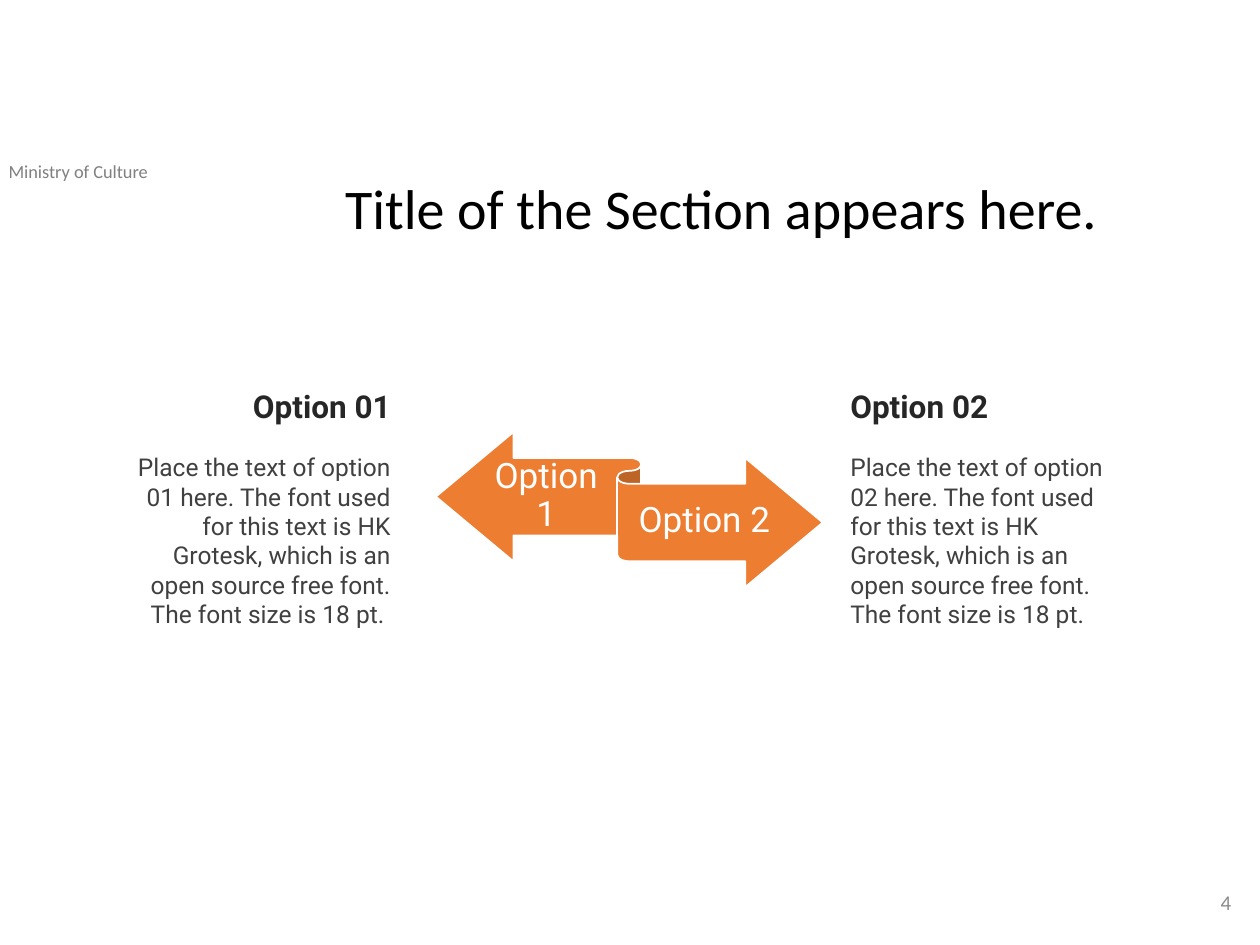
"""Build a section slide that sets two options either side of a ribbon arrow."""
from dataclasses import dataclass

from pptx import Presentation
from pptx.dml.color import RGBColor
from pptx.enum import shapes, text
from pptx.util import Inches, Pt


@dataclass(frozen=True)
class Theme:
    head_font: str = "Calibri"
    body_font: str = "Roboto"
    accent: str = "ED7D31"
    white: str = "FFFFFF"
    black: str = "000000"
    heading: str = "262626"
    body: str = "404040"
    footer: str = "8C8C8C"
    tag: str = "808080"
    title_pt: float = 32
    label_pt: float = 20
    heading_pt: float = 18
    body_pt: float = 14
    footer_pt: float = 12
    tag_pt: float = 10.5


T = Theme()
LEFT, CENTER, RIGHT = text.PP_ALIGN.LEFT, text.PP_ALIGN.CENTER, text.PP_ALIGN.RIGHT
TOP, MIDDLE = text.MSO_ANCHOR.TOP, text.MSO_ANCHOR.MIDDLE

prs = Presentation()
prs.slide_width, prs.slide_height = Inches(10), Inches(7.5)
s = prs.slides.add_slide(prs.slide_layouts[6])
W, H = prs.slide_width / 100, prs.slide_height / 100


def add_box(x, y, w, h, anchor=TOP):
    """Add a wrapping text box placed in percent of the slide."""
    sp = s.shapes.add_textbox(int(x * W), int(y * H), int(w * W), int(h * H))
    tf = sp.text_frame
    tf.word_wrap = True
    tf.vertical_anchor = anchor
    return tf


def add_run(p, words, font, size, color, align=LEFT, bold=False):
    """Add one styled run to an aligned paragraph."""
    p.alignment = align
    r = p.add_run()
    r.text = words
    r.font.name, r.font.size, r.font.bold = font, Pt(size), bold
    r.font.color.rgb = RGBColor.from_string(color)


tf = add_box(-0.3, 16.27, 21.8, 3.73)
add_run(tf.paragraphs[0], "Ministry of Culture", T.head_font, T.tag_pt, T.tag)

sp = s.shapes.add_shape(shapes.MSO_SHAPE.LEFT_RIGHT_RIBBON,
                        int(34.6 * W), int(45.73 * H), int(30.7 * W), int(16.4 * H))
sp.shadow.inherit = False
sp.fill.solid()
sp.fill.fore_color.rgb = RGBColor.from_string(T.accent)
sp.line.color.rgb = RGBColor.from_string(T.white)
sp.line.width = Pt(1)

for label, x, y, w in (("Option 1", 38.3, 48.53, 10.1), ("Option 2", 49.9, 51.2, 12)):
    tf = add_box(x, y, w, 8, MIDDLE)
    tf.margin_left = tf.margin_right = 0
    tf.margin_top = tf.margin_bottom = Inches(0.08)
    p = tf.paragraphs[0]
    p.line_spacing = 0.9
    add_run(p, label, T.body_font, T.label_pt, T.white, CENTER)

for number, x, w, align, end in (("01", 9.2, 22.8, RIGHT, " "), ("02", 66.5, 22.1, LEFT, "")):
    tf = add_box(x, 40.27, w, 30.27)
    p = tf.paragraphs[0]
    p.space_after = Pt(15.8)
    add_run(p, f"Option {number}", T.body_font, T.heading_pt, T.heading, align, True)
    add_run(tf.add_paragraph(),
            f"Place the text of option {number} here. The font used for this text is "
            f"HK Grotesk, which is an open source free font. The font size is 18 pt.{end}",
            T.body_font, T.body_pt, T.body, align)

tf = add_box(76.2, 92.8, 22.5, 5.33, MIDDLE)
add_run(tf.paragraphs[0], "4", T.head_font, T.footer_pt, T.footer, RIGHT)

tf = add_box(26.4, 18.53, 65.4, 10.53)
p = tf.paragraphs[0]
p.line_spacing = 0.9
add_run(p, "Title of the Section appears here.", T.head_font, T.title_pt, T.black)

prs.save("out.pptx")
